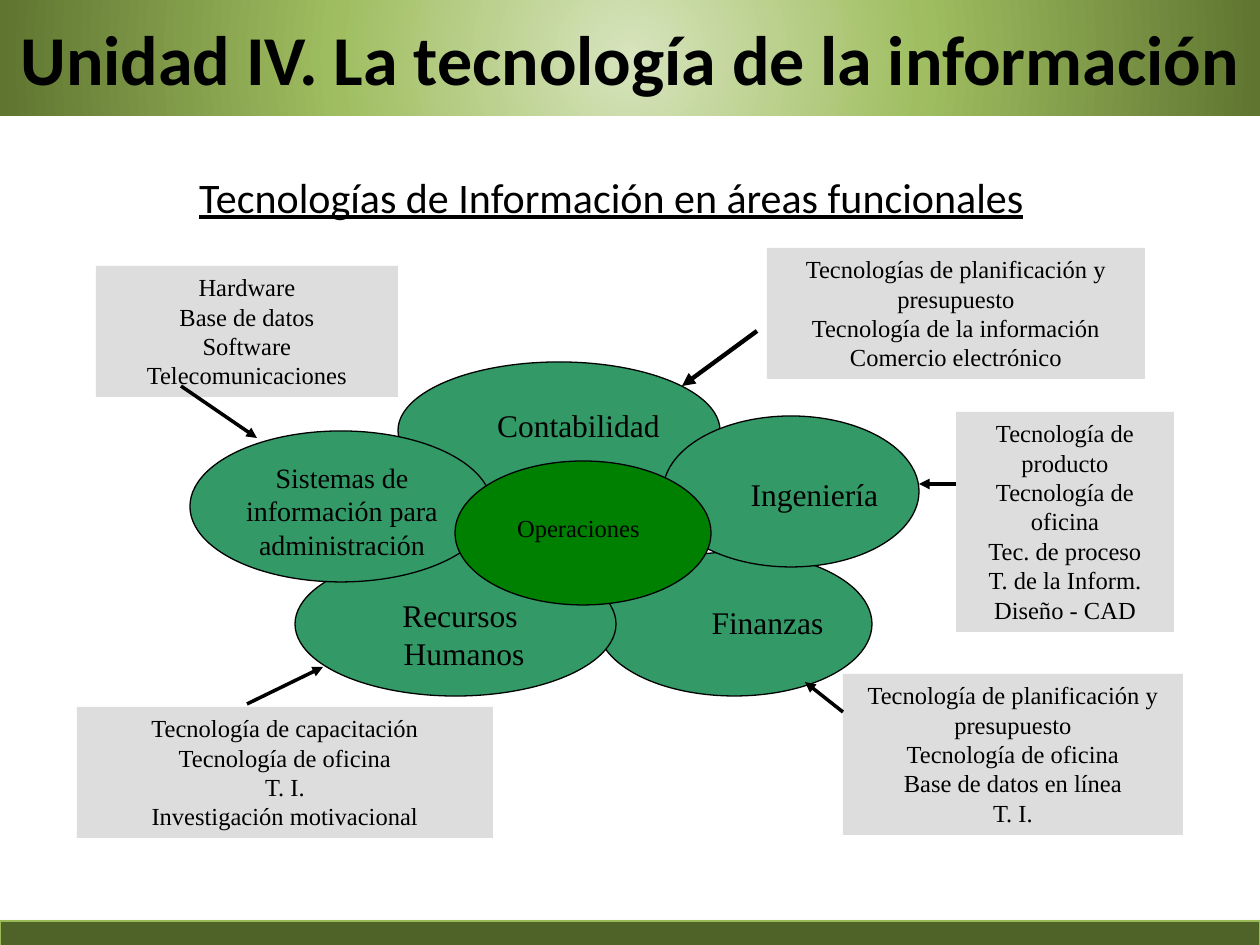
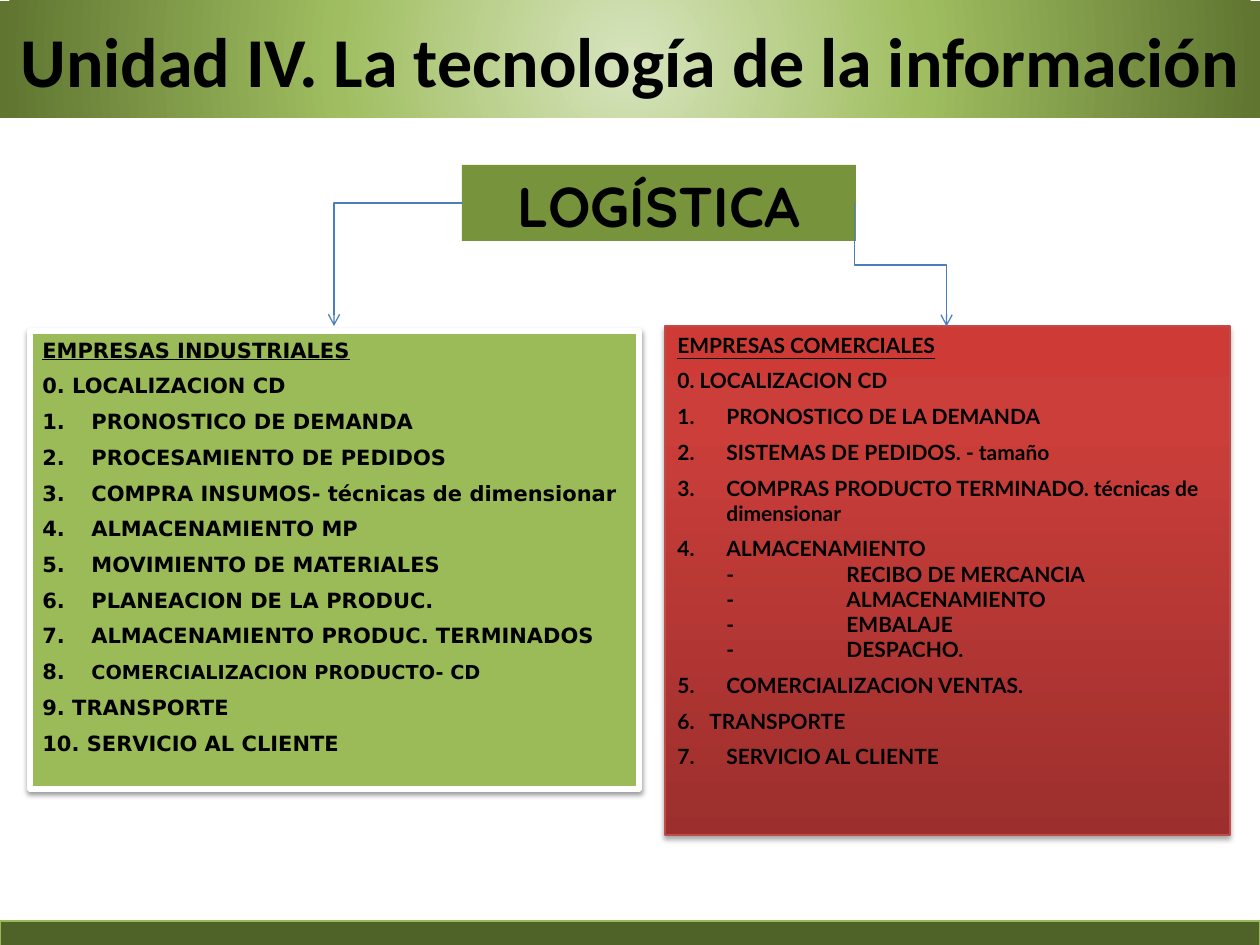
from lxml import etree
from pptx import Presentation
from pptx.dml.color import RGBColor
from pptx.enum.shapes import MSO_CONNECTOR, MSO_SHAPE
from pptx.enum.text import MSO_ANCHOR, PP_ALIGN
from pptx.oxml.ns import qn
from pptx.util import Pt

RECT, OVAL = MSO_SHAPE.RECTANGLE, MSO_SHAPE.OVAL
STRAIGHT, ELBOW = MSO_CONNECTOR.STRAIGHT, MSO_CONNECTOR.ELBOW
TOP, MIDDLE = MSO_ANCHOR.TOP, MSO_ANCHOR.MIDDLE
LEFT, CENTER = PP_ALIGN.LEFT, PP_ALIGN.CENTER
EMU_PER_PX = 914400 / 126
SLIDE_W, SLIDE_H = 1260, 945

COLORS = {
    "black": "000000", "white": "FFFFFF", "footer": "4F6228", "footer_line": "98B955",
    "area": "339966", "core": "008000", "note": "DDDDDD", "heading": "77933C",
    "industrial": "9BBB59", "commercial_line": "BF4C48", "elbow": "4B7EBC",
}
TITLE_STOPS = [(0, "D7E4BD"), (46, "A0BE61"), (100, "5F7530")]
COMMERCIAL_STOPS = [(0, "9C2F2D"), (80, "CB3E3A"), (100, "CE3B37")]
SERIF, SANS = "Times New Roman", "Calibri"

TITLE = "Unidad IV. La tecnología de la información"
SUBTITLE = "Tecnologías de Información en áreas funcionales"

# label lines, size, colour, ellipse box, label box
AREAS = [
    (["Finanzas"], 18, "area", (597, 552, 275, 144), (654, 597, 227, 50)),
    (["Contabilidad"], 18, "area", (398, 362, 322, 137), (465, 400, 227, 50)),
    (["Ingeniería"], 18, "area", (663, 416, 256, 151), (701, 469, 227, 50)),
    (["Recursos ", "Humanos"], 18, "area", (295, 552, 321, 144), (341, 590, 246, 89)),
    (["Sistemas de información para administración"], 16, "area",
     (190, 431, 302, 151), (219, 454, 246, 115)),
    (["Operaciones"], 14, "core", (455, 461, 256, 144), (465, 507, 227, 43)),
]
# lines, box, arrow start, arrow tip, arrow width
NOTES = [
    (["Tecnologías de planificación y presupuesto", "Tecnología de la información",
      "Comercio electrónico"], (767, 248, 378, 131), (757, 331), (682, 386), 2.5),
    (["Tecnología de producto", "Tecnología de oficina", "Tec. de proceso",
      "T. de la Inform.", "Diseño - CAD"], (956, 412, 218, 220), (956, 484), (919, 484), 2),
    (["Tecnología de planificación y presupuesto", "Tecnología de oficina",
      "Base de datos en línea", "T. I."], (843, 674, 340, 161), (843, 712), (805, 682), 2),
    (["Tecnología de capacitación", "Tecnología de oficina", "T. I.",
      "Investigación motivacional"], (77, 707, 416, 131), (247, 704), (323, 667), 2),
    (["Hardware", "Base de datos", "Software", "Telecomunicaciones"],
     (96, 266, 302, 131), (181, 386), (257, 438), 2),
]

INDUSTRIAL = [
    "EMPRESAS INDUSTRIALES", "0. LOCALIZACION CD", "1.\tPRONOSTICO DE DEMANDA",
    "2.\tPROCESAMIENTO DE PEDIDOS", "3.\tCOMPRA INSUMOS- técnicas de dimensionar",
    "4.\tALMACENAMIENTO MP", "5.\tMOVIMIENTO DE MATERIALES",
    "6.\tPLANEACION DE LA PRODUC.", "7.\tALMACENAMIENTO PRODUC. TERMINADOS",
    "8.\tCOMERCIALIZACION PRODUCTO- CD", "9. TRANSPORTE", "10. SERVICIO AL CLIENTE",
]
COMMERCIAL = [
    "EMPRESAS COMERCIALES", "0. LOCALIZACION CD", "1.\tPRONOSTICO DE LA DEMANDA",
    "2.\tSISTEMAS DE PEDIDOS. - tamaño",
    "3.\tCOMPRAS PRODUCTO TERMINADO. técnicas de dimensionar", "4.\tALMACENAMIENTO",
    "-\tRECIBO DE MERCANCIA", "-\tALMACENAMIENTO", "-\tEMBALAJE", "-\tDESPACHO.",
    "5.\tCOMERCIALIZACION VENTAS.", "6.\tTRANSPORTE", "7.\tSERVICIO AL CLIENTE",
]
ITEM_INDENT, SUBITEM_INDENT, NARROW_INDENT = 49, 169, 32
SMALL_ITEM = "COMERCIALIZACION PRODUCTO- CD"
NARROW_ITEM = "6.\tTRANSPORTE"

# preset, unrotated box, rotation in degrees, flip
ELBOWS = [
    ("bentConnector3", (839, 219, 123, 92), 270, "flipH"),
    ("bentConnector2", (334, 203, 128, 123), 180, "flipV"),
]


def px(*values):
    return [round(v * EMU_PER_PX) for v in values]


def rgb(name):
    return RGBColor.from_string(COLORS[name])


def sub(parent, tag, **attrs):
    return etree.SubElement(parent, qn(tag), {k: str(v) for k, v in attrs.items()})


def add_box(slide, box, kind=RECT, fill=None, line=None, width=0.75):
    s = slide.shapes.add_shape(kind, *px(*box))
    s.shadow.inherit = False
    if fill:
        s.fill.solid()
        s.fill.fore_color.rgb = rgb(fill)
    if line:
        s.line.color.rgb = rgb(line)
        s.line.width = Pt(width)
    else:
        s.line.fill.background()
    return s


def set_gradient(s, stops, angle=None):
    """Linear gradient at the given angle, or circular from the centre without one."""
    s.fill.gradient()
    grad = s._element.spPr.find(qn("a:gradFill"))
    for child in list(grad):
        grad.remove(child)
    stop_list = sub(grad, "a:gsLst")
    for pos, color in stops:
        sub(sub(stop_list, "a:gs", pos=pos * 1000), "a:srgbClr", val=color)
    if angle is None:
        sub(sub(grad, "a:path", path="circle"), "a:fillToRect",
            l=50000, t=50000, r=50000, b=50000)
    else:
        sub(grad, "a:lin", ang=angle * 60000, scaled=0)


def drop_shadow(s, alpha=35, distance=1.8):
    effects = s._element.spPr.find(qn("a:effectLst"))
    shadow = sub(effects, "a:outerShdw", blurRad=Pt(3.1), dist=Pt(distance),
                 dir=5400000, rotWithShape=0)
    sub(sub(shadow, "a:srgbClr", val=COLORS["black"]), "a:alpha", val=alpha * 1000)


def write(s, lines, size, font, bold=False, align=CENTER, anchor=TOP):
    tf = s.text_frame
    tf.word_wrap = True
    tf.vertical_anchor = anchor
    tf.text = "\n".join(lines)
    for p in tf.paragraphs:
        p.alignment = align
        for r in p.runs:
            r.font.size, r.font.name, r.font.bold = Pt(size), font, bold
            r.font.color.rgb = rgb("black")
    return tf


def add_label(slide, box, lines, size, font):
    return write(slide.shapes.add_textbox(*px(*box)), lines, size, font)


def add_arrow(slide, kind, start, tip, color, width, head):
    c = slide.shapes.add_connector(kind, *px(*start, *tip))
    c.line.color.rgb = rgb(color)
    c.line.width = Pt(width)
    sub(c.line._get_or_add_ln(), "a:tailEnd", type=head)
    sub(c._element.spPr, "a:effectLst")
    return c


def add_elbow(slide, preset, box, rotation, flip):
    x, y, w, h = box
    c = add_arrow(slide, ELBOW, (x, y), (x + w, y + h), "elbow", 0.75, "arrow")
    c._element.spPr.find(qn("a:prstGeom")).set("prst", preset)
    xfrm = c._element.spPr.find(qn("a:xfrm"))
    xfrm.set("rot", str(rotation * 60000))
    xfrm.set(flip, "1")


def write_panel(s, items, font):
    tf = write(s, items, 12, font, bold=True, align=LEFT)
    tf.paragraphs[0].runs[0].font.underline = True
    for i, p in enumerate(tf.paragraphs):
        is_sub = p.text.startswith("-")
        margin, hang = ITEM_INDENT, ITEM_INDENT
        if is_sub:
            margin, hang = SUBITEM_INDENT, SUBITEM_INDENT - ITEM_INDENT
        elif p.text == NARROW_ITEM:
            margin = hang = NARROW_INDENT
        left, indent = px(margin, -hang)
        pPr = p._p.get_or_add_pPr()
        pPr.set("marL", str(left))
        pPr.set("indent", str(indent))
        p.space_before = Pt(0 if is_sub or i == 0 else 6)
        if p.text.endswith(SMALL_ITEM):
            number = p.runs[0]
            number.text = p.text.removesuffix(SMALL_ITEM)
            r = p.add_run()
            r.text = SMALL_ITEM
            r.font.size, r.font.name, r.font.bold = Pt(11), font, True
            r.font.color.rgb = rgb("black")


def new_slide(prs, title_top):
    slide = prs.slides.add_slide(prs.slide_layouts[6])
    band = add_box(slide, (0, title_top, SLIDE_W, 117))
    set_gradient(band, TITLE_STOPS)
    write(band, [TITLE], 40, SANS, bold=True, anchor=MIDDLE)
    drop_shadow(add_box(slide, (0, 921, SLIDE_W, 28), fill="footer", line="footer_line"))
    return slide


def build_areas(prs):
    slide = new_slide(prs, -1)
    tf = add_label(slide, (134, 165, 955, 63), [SUBTITLE], 24, SANS)
    tf.paragraphs[0].runs[0].font.underline = True
    for _, _, color, ellipse, _ in AREAS:
        add_box(slide, ellipse, OVAL, color, "black")
    for lines, size, _, _, box in AREAS:
        add_label(slide, box, lines, size, SERIF)
    for lines, box, start, tip, width in NOTES:
        write(add_box(slide, box, fill="note"), lines, 14, SERIF)
        add_arrow(slide, STRAIGHT, start, tip, "black", width, "triangle")


def build_logistics(prs):
    slide = new_slide(prs, 1)
    heading = add_box(slide, (462, 165, 394, 76), fill="heading")
    write(heading, ["LOGÍSTICA"], 32, "Quicksand", bold=True)
    industrial = add_box(slide, (30, 331, 609, 458), fill="industrial", line="white", width=3)
    drop_shadow(industrial, 38, 1.6)
    write_panel(industrial, INDUSTRIAL, "DejaVu Sans")
    commercial = add_box(slide, (665, 326, 565, 509), line="commercial_line")
    set_gradient(commercial, COMMERCIAL_STOPS, 270)
    drop_shadow(commercial)
    write_panel(commercial, COMMERCIAL, "Lato")
    for elbow in ELBOWS:
        add_elbow(slide, *elbow)


def main():
    prs = Presentation()
    prs.slide_width, prs.slide_height = px(SLIDE_W, SLIDE_H)
    build_areas(prs)
    build_logistics(prs)
    prs.save("out.pptx")


if __name__ == "__main__":
    main()
